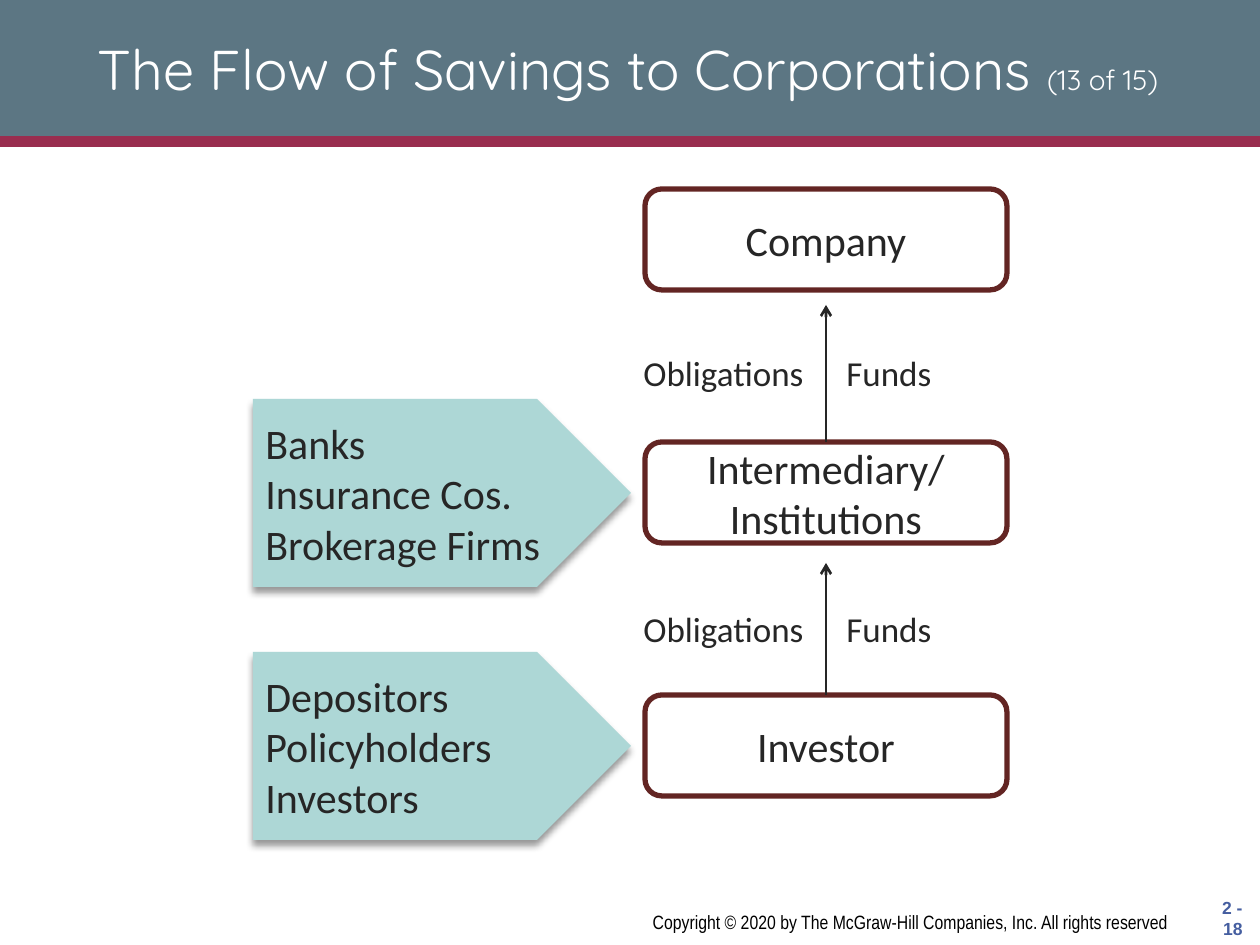
from lxml.etree import SubElement
from pptx import Presentation
from pptx.dml.color import RGBColor
from pptx.enum.shapes import MSO_CONNECTOR as Connector, MSO_SHAPE as Shape
from pptx.enum.text import MSO_ANCHOR as Anchor, MSO_AUTO_SIZE as AutoSize, PP_ALIGN as Align
from pptx.oxml.ns import qn
from pptx.util import Emu, Pt

SLATE = RGBColor(0x5C, 0x76, 0x83)
CRIMSON = RGBColor(0x99, 0x2D, 0x4F)
AQUA = RGBColor(0xAD, 0xD7, 0xD6)
MAROON = RGBColor(0x63, 0x25, 0x23)
INK = RGBColor(0x26, 0x26, 0x26)
BLUE = RGBColor(0x45, 0x5E, 0xA0)
BLACK = RGBColor(0, 0, 0)
WHITE = RGBColor(0xFF, 0xFF, 0xFF)

NODE_TEXT = {"name": "Calibri", "size": Pt(24)}
LABEL_TEXT = {"name": "Calibri", "size": Pt(20)}
TITLE_TEXT = {"name": "Quicksand", "size": Pt(32)}
COUNT_TEXT = {"name": "Quicksand", "size": Pt(16)}
COPYRIGHT_TEXT = {"name": "Arial Narrow", "size": Pt(11)}
NUMBER_TEXT = {"name": "Arial", "size": Pt(10), "bold": True}


def px(length):
    return Emu(round(length * 914400 / 126))


class FlowSlide:
    def __init__(self, deck):
        self.page = deck.slides.add_slide(deck.slide_layouts[5])

    def style(self, font, look, color):
        for name, value in look.items():
            setattr(font, name, value)
        font.color.rgb = color

    def put_lines(self, box, lines, look, color=INK, align=Align.LEFT, **frame_format):
        frame = box.text_frame
        settings = {"word_wrap": True, "vertical_anchor": Anchor.TOP, **frame_format}
        for name, value in settings.items():
            setattr(frame, name, value)
        for index, line in enumerate(lines):
            para = frame.add_paragraph() if index else frame.paragraphs[0]
            para.alignment = align
            span = para.add_run()
            span.text = line
            self.style(span.font, look, color)

    def shape(self, kind, area, fill=None, line=None):
        box = self.page.shapes.add_shape(kind, *map(px, area))
        box.shadow.inherit = False
        if fill is None:
            box.fill.background()
        else:
            box.fill.solid()
            box.fill.fore_color.rgb = fill
        if line is None:
            box.line.fill.background()
        else:
            box.line.color.rgb = line
            box.line.width = Pt(3)
        return box

    def title(self, area, heading, count):
        box = self.page.shapes.title
        box.left, box.top, box.width, box.height = map(px, area)
        box.element.getparent().append(box.element)
        self.put_lines(box, [heading], TITLE_TEXT, WHITE, Align.CENTER,
                       vertical_anchor=Anchor.MIDDLE, auto_size=AutoSize.NONE)
        span = box.text_frame.paragraphs[0].add_run()
        span.text = count
        self.style(span.font, COUNT_TEXT, WHITE)

    def text(self, area, line, look, **formats):
        box = self.page.shapes.add_textbox(*map(px, area))
        self.put_lines(box, [line], look, **formats)

    def node(self, top, lines):
        box = self.shape(Shape.ROUNDED_RECTANGLE, (645, top, 362, 101), line=MAROON)
        self.put_lines(box, lines, NODE_TEXT, align=Align.CENTER, vertical_anchor=Anchor.MIDDLE)
        return box

    def pentagon(self, top, lines):
        box = self.shape(Shape.PENTAGON, (253, top, 378, 188), fill=AQUA)
        effects = box.element.spPr.find(qn("a:effectLst"))
        shadow = SubElement(effects, qn("a:outerShdw"), blurRad=str(Pt(4)),
                            dist=str(Pt(3)), dir="5400000", rotWithShape="0")
        tint = SubElement(shadow, qn("a:srgbClr"), val="000000")
        SubElement(tint, qn("a:alpha"), val="40000")
        self.put_lines(box, lines, NODE_TEXT, vertical_anchor=Anchor.MIDDLE)

    def arrow(self, source, tip):
        x = source.left + source.width // 2
        link = self.page.shapes.add_connector(Connector.STRAIGHT, x, source.top, x, px(tip))
        link.begin_connect(source, 0)
        link.line.color.rgb = INK
        link.line.width = Pt(1.5)
        outline = link.element.spPr.find(qn("a:ln"))
        SubElement(outline, qn("a:tailEnd"), type="arrow")
        SubElement(link.element.spPr, qn("a:effectLst"))


def main():
    deck = Presentation()
    deck.slide_width, deck.slide_height = px(1260), px(945)
    slide = FlowSlide(deck)

    slide.shape(Shape.RECTANGLE, (0, 136, 1260, 11), fill=CRIMSON)
    slide.shape(Shape.RECTANGLE, (0, 0, 1260, 136), fill=SLATE)
    slide.text((1192, 892, 63, 53), "2 - 18", NUMBER_TEXT, color=BLUE, align=Align.RIGHT,
               vertical_anchor=Anchor.MIDDLE, word_wrap=False)
    slide.text((452, 904, 729, 36),
               "Copyright © 2020 by The McGraw-Hill Companies, Inc. All rights reserved",
               COPYRIGHT_TEXT, color=BLACK, align=Align.RIGHT)
    slide.title((32, 10, 1192, 116), "The Flow of Savings to Corporations ", "(13 of 15)")

    pitch = 253
    groups = [["Banks", "Insurance Cos.", "Brokerage Firms"],
              ["Depositors", "Policyholders", "Investors"]]
    for row, lines in enumerate(groups):
        slide.pentagon(399 + row * pitch, lines)

    stages = [["Company"], ["Intermediary/", "Institutions"], ["Investor"]]
    nodes = [slide.node(189 + row * pitch, lines) for row, lines in enumerate(stages)]

    for source, tip, top in zip(nodes[1:], (305, 563), (345, 601)):
        slide.arrow(source, tip)
        slide.text((631, top, 189, 55), "Obligations", LABEL_TEXT)
        slide.text((834, top, 116, 55), "Funds", LABEL_TEXT)

    deck.save("out.pptx")


if __name__ == "__main__":
    main()
